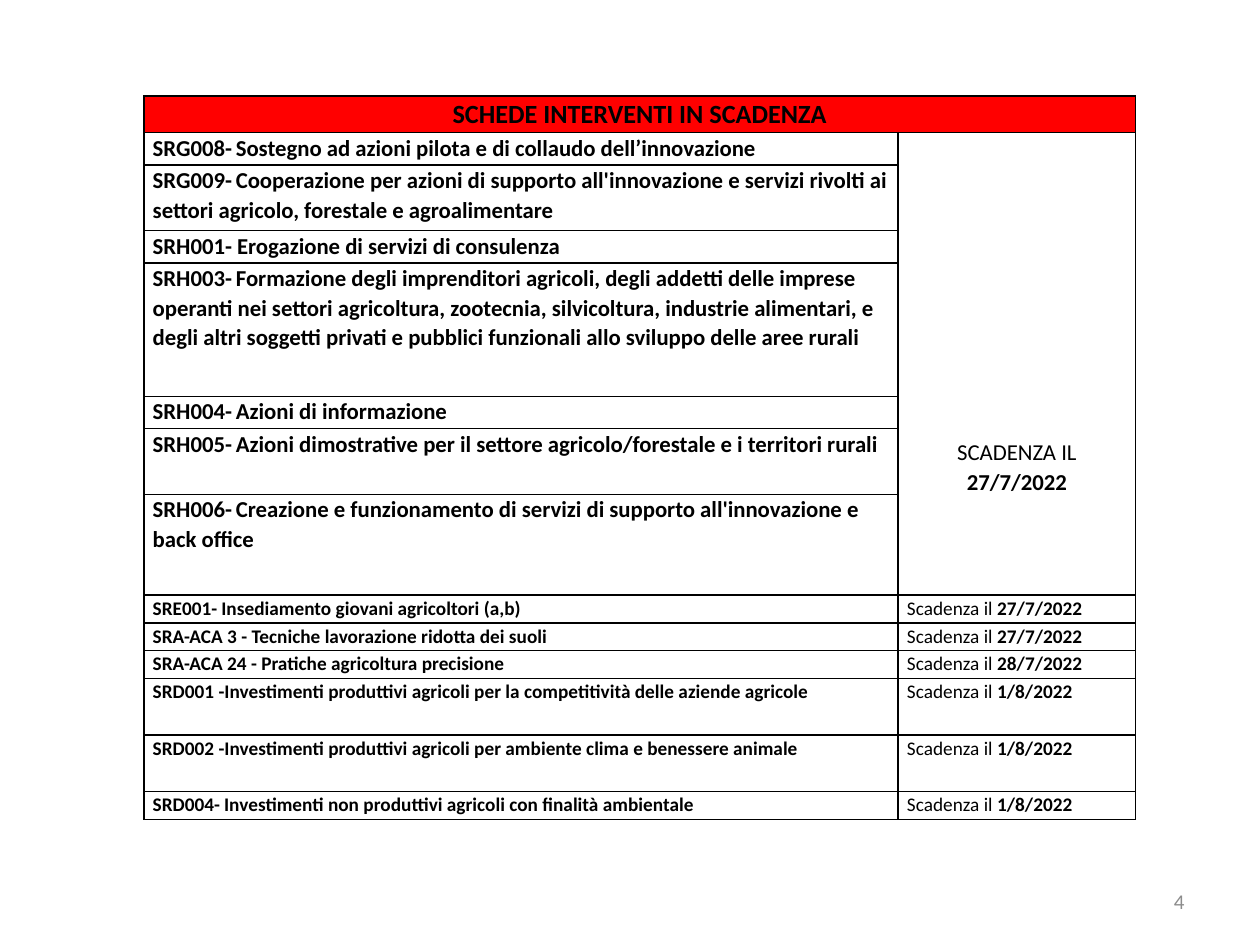
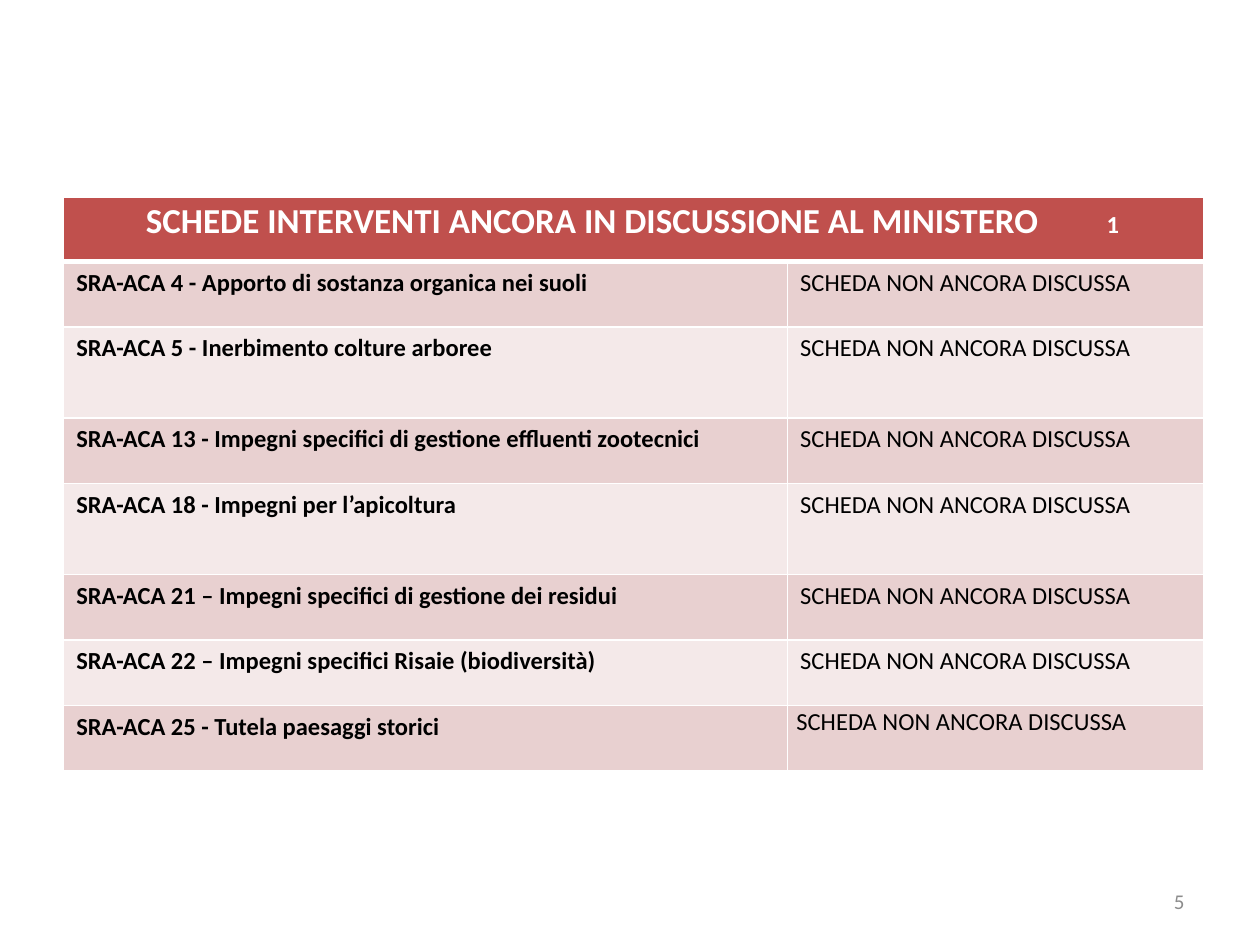
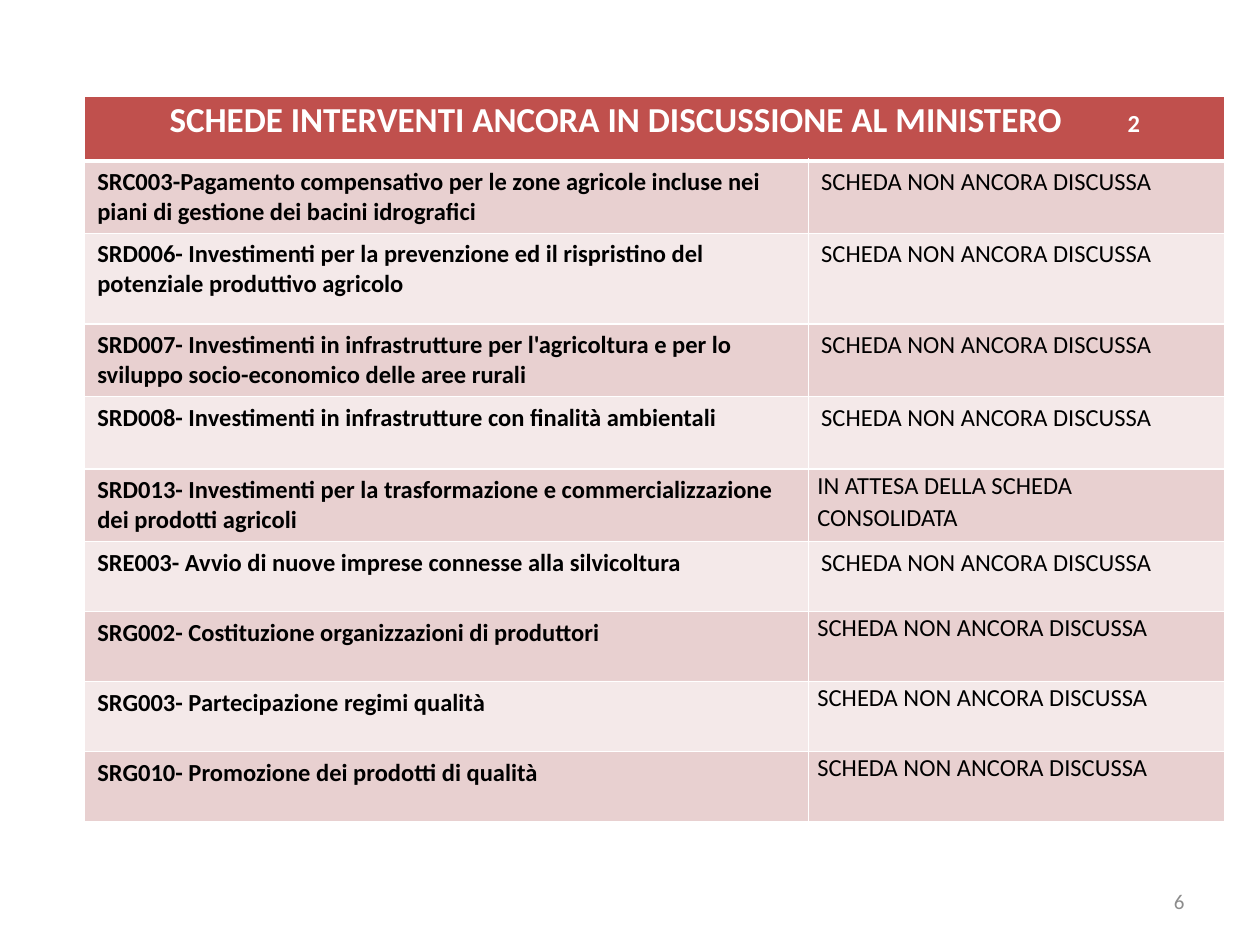
from dataclasses import dataclass

from lxml import etree
from pptx import Presentation
from pptx.dml.color import RGBColor
from pptx.enum.text import MSO_ANCHOR, PP_ALIGN
from pptx.oxml.ns import qn
from pptx.util import Pt

CENTER, LEFT, RIGHT = PP_ALIGN.CENTER, PP_ALIGN.LEFT, PP_ALIGN.RIGHT
MIDDLE = MSO_ANCHOR.MIDDLE


@dataclass(frozen=True)
class Theme:
    font: str = "Calibri"
    black: str = "000000"
    white: str = "FFFFFF"
    grey: str = "8C8C8C"
    red: str = "FF0000"
    brick: str = "C0504D"
    bands: tuple = ("E8D0D0", "F4E9E9")
    heading: int = 20
    deadline_heading: int = 15
    body: int = 14
    large: int = 13
    small: int = 11
    gap: int = 10
    number: int = 12


theme = Theme()


def write_cell(cell, runs, size, color=theme.black, align=LEFT, tight=True, tab=None):
    cell.margin_left = cell.margin_right = Pt(5 if tight else 7.2)
    cell.margin_top = cell.margin_bottom = Pt(0 if tight else 3.6)
    paragraph = cell.text_frame.paragraphs[0]
    paragraph.alignment = align
    if tight:
        paragraph.line_spacing = 1.07
    if tab:
        tab_list = etree.SubElement(paragraph._p.get_or_add_pPr(), qn("a:tabLst"))
        etree.SubElement(tab_list, qn("a:tab"), pos=str(Pt(tab)), algn="l")
    font = paragraph.font
    font.name = theme.font
    font.color.rgb = RGBColor.from_string(color)
    same_size = all(run_size == size for _, run_size, _ in runs)
    same_weight = all(bold == runs[0][2] for _, _, bold in runs)
    if same_size:
        font.size = Pt(size)
    if same_weight:
        font.bold = runs[0][2]
    for text, run_size, bold in runs:
        run = paragraph.add_run()
        run.text = text
        if not same_size:
            run.font.size = Pt(run_size)
        if not same_weight:
            run.font.bold = bold


def start_table(slide, left, top, widths, heights, line_color, heading_fill, heading_line):
    grid = slide.shapes.add_table(
        len(heights), len(widths), Pt(left), Pt(top), Pt(sum(widths)), Pt(sum(heights))
    ).table
    grid.first_row = grid.horz_banding = False
    for column, width in zip(grid.columns, widths):
        column.width = Pt(width)
    for r, height in enumerate(heights):
        grid.rows[r].height = Pt(height)
        for cell in grid.rows[r].cells:
            if r == 0:
                cell.fill.solid()
                cell.fill.fore_color.rgb = RGBColor.from_string(heading_fill)
            else:
                cell.fill.background()
            properties = cell._tc.get_or_add_tcPr()
            for position, side in enumerate(("lnL", "lnR", "lnT", "lnB")):
                under_heading = (r, side) in ((0, "lnB"), (1, "lnT"))
                width = heading_line if under_heading else 1
                line = etree.Element(qn(f"a:{side}"), w=str(Pt(width)))
                fill = etree.SubElement(line, qn("a:solidFill"))
                etree.SubElement(fill, qn("a:srgbClr"), val=line_color)
                properties.insert(position, line)
    grid.cell(0, 0).merge(grid.cell(0, 1))
    return grid


presentation = Presentation()
presentation.slide_width, presentation.slide_height = Pt(720), Pt(540)
slides = []
for number in (4, 5, 6):
    slide = presentation.slides.add_slide(presentation.slide_layouts[6])
    slides.append(slide)
    page_number = slide.shapes.add_textbox(Pt(516), Pt(500.5), Pt(168), Pt(28.75)).text_frame
    page_number.word_wrap = True
    page_number.vertical_anchor = MIDDLE
    paragraph = page_number.paragraphs[0]
    paragraph.text = str(number)
    paragraph.alignment = RIGHT
    paragraph.font.name = theme.font
    paragraph.font.size = Pt(theme.number)
    paragraph.font.color.rgb = RGBColor.from_string(theme.grey)

shared_deadline = [
    (18.5, ("SRG008-", "Sostegno ad azioni pilota e di collaudo dell’innovazione")),
    (37.5, ("SRG009-", "Cooperazione per azioni di supporto all'innovazione e servizi rivolti ai settori agricolo, forestale e agroalimentare")),
    (18.5, ("SRH001- Erogazione di servizi di consulenza",)),
    (76.3, ("SRH003-", "Formazione degli imprenditori agricoli, degli addetti delle imprese operanti nei settori agricoltura, zootecnia, silvicoltura, industrie alimentari, e degli altri soggetti privati e pubblici funzionali allo sviluppo delle aree rurali")),
    (18.5, ("SRH004-", "Azioni di informazione")),
    (37.5, ("SRH005-", "Azioni dimostrative per il settore agricolo/forestale e i territori rurali")),
    (57.6, ("SRH006-", "Creazione e funzionamento di servizi di supporto all'innovazione e back office")),
]
own_deadline = [
    (15.9, ("SRE001-", "Insediamento giovani agricoltori (a,b)"), "27/7/2022"),
    (15.9, ("SRA-ACA 3 - Tecniche lavorazione ridotta dei suoli",), "27/7/2022"),
    (15.9, ("SRA-ACA 24 - Pratiche agricoltura precisione",), "28/7/2022"),
    (32.3, ("SRD001 -Investimenti produttivi agricoli per la competitività delle aziende agricole",), "1/8/2022"),
    (32.3, ("SRD002 -Investimenti produttivi agricoli per ambiente clima e benessere animale",), "1/8/2022"),
    (15.9, ("SRD004-", "Investimenti non produttivi agricoli con finalità ambientale"), "1/8/2022"),
]
interventions = shared_deadline + own_deadline
deadlines = start_table(
    slides[0], 82.3, 54.9, (431, 135.5), [20.9] + [row[0] for row in interventions],
    theme.black, theme.red, 1,
)
write_cell(
    deadlines.cell(0, 0),
    [("SCHEDE INTERVENTI IN SCADENZA", theme.deadline_heading, True)],
    theme.deadline_heading, align=CENTER,
)
for r, (_, parts, *_) in enumerate(interventions, 1):
    size = theme.large if r <= len(shared_deadline) else theme.small
    runs = [(parts[0], size, True)]
    if len(parts) == 2:
        runs += [(" ", theme.gap, False), (parts[1], size, True)]
    write_cell(deadlines.cell(r, 0), runs, size)
for r, (_, _, date) in enumerate(own_deadline, len(shared_deadline) + 1):
    write_cell(
        deadlines.cell(r, 1),
        [("Scadenza il ", theme.small, False), (date, theme.small, True)], theme.small,
    )
common_date = deadlines.cell(1, 1)
common_date.merge(deadlines.cell(len(shared_deadline), 1))
write_cell(
    common_date,
    [("SCADENZA IL ", theme.large, False), ("27/7/2022", theme.large, True)],
    theme.large, align=CENTER,
)
common_date.margin_top = Pt(174)

NOT_DISCUSSED = "SCHEDA NON ANCORA DISCUSSA"
AWAITED = "IN ATTESA DELLA SCHEDA CONSOLIDATA"
first_part = [
    (37.4, "SRA-ACA 4 - Apporto di sostanza organica nei suoli", NOT_DISCUSSED, False),
    (52.1, "SRA-ACA 5 - Inerbimento colture arboree", NOT_DISCUSSED, False),
    (37.4, "SRA-ACA 13 - Impegni specifici di gestione effluenti zootecnici", NOT_DISCUSSED, False),
    (52.1, "SRA-ACA 18 - Impegni per l’apicoltura", NOT_DISCUSSED, False),
    (37.4, "SRA-ACA 21 – Impegni specifici di gestione dei residui", NOT_DISCUSSED, False),
    (37.4, "SRA-ACA 22 – Impegni specifici Risaie (biodiversità)", NOT_DISCUSSED, False),
    (37.4, "SRA-ACA 25 - Tutela paesaggi storici", NOT_DISCUSSED, True),
]
second_part = [
    (41.4, "SRC003-Pagamento compensativo per le zone agricole incluse nei piani di gestione dei bacini idrografici", NOT_DISCUSSED, False),
    (52, "SRD006- Investimenti per la prevenzione ed il rispristino del potenziale produttivo agricolo", NOT_DISCUSSED, False),
    (41.4, "SRD007- Investimenti in infrastrutture per l'agricoltura e per lo sviluppo socio-economico delle aree rurali", NOT_DISCUSSED, False),
    (41.4, "SRD008- Investimenti in infrastrutture con finalità ambientali", NOT_DISCUSSED, False),
    (41.4, "SRD013- Investimenti per la trasformazione e commercializzazione dei prodotti agricoli", AWAITED, True),
    (40, "SRE003- Avvio di nuove imprese connesse alla silvicoltura", NOT_DISCUSSED, False),
    (40, "SRG002- Costituzione organizzazioni di produttori", NOT_DISCUSSED, True),
    (40, "SRG003- Partecipazione regimi qualità", NOT_DISCUSSED, True),
    (40, "SRG010- Promozione dei prodotti di qualità", NOT_DISCUSSED, True),
]
pending_parts = [
    (slides[1], 36.4, 112.5, "1", 47, first_part),
    (slides[2], 48.4, 54.9, "2", 48.5, second_part),
]
for slide, left, top, part_number, heading_indent, pending in pending_parts:
    discussion = start_table(
        slide, left, top, (413.7, 238), [37] + [row[0] for row in pending],
        theme.white, theme.brick, 3,
    )
    heading = discussion.cell(0, 0)
    write_cell(
        heading,
        [("SCHEDE INTERVENTI ANCORA IN DISCUSSIONE AL MINISTERO\t", theme.heading, True),
         (part_number, theme.body, True)],
        theme.heading, color=theme.white, tab=596 - heading_indent,
    )
    heading.margin_left = Pt(heading_indent)
    for r, (_, intervention, status, tight) in enumerate(pending, 1):
        write_cell(discussion.cell(r, 0), [(intervention, theme.body, True)], theme.body, tight=False)
        write_cell(discussion.cell(r, 1), [(status, theme.body, False)], theme.body, tight=tight)
        for cell in discussion.rows[r].cells:
            cell.fill.solid()
            cell.fill.fore_color.rgb = RGBColor.from_string(theme.bands[(r - 1) % 2])

presentation.save("out.pptx")
